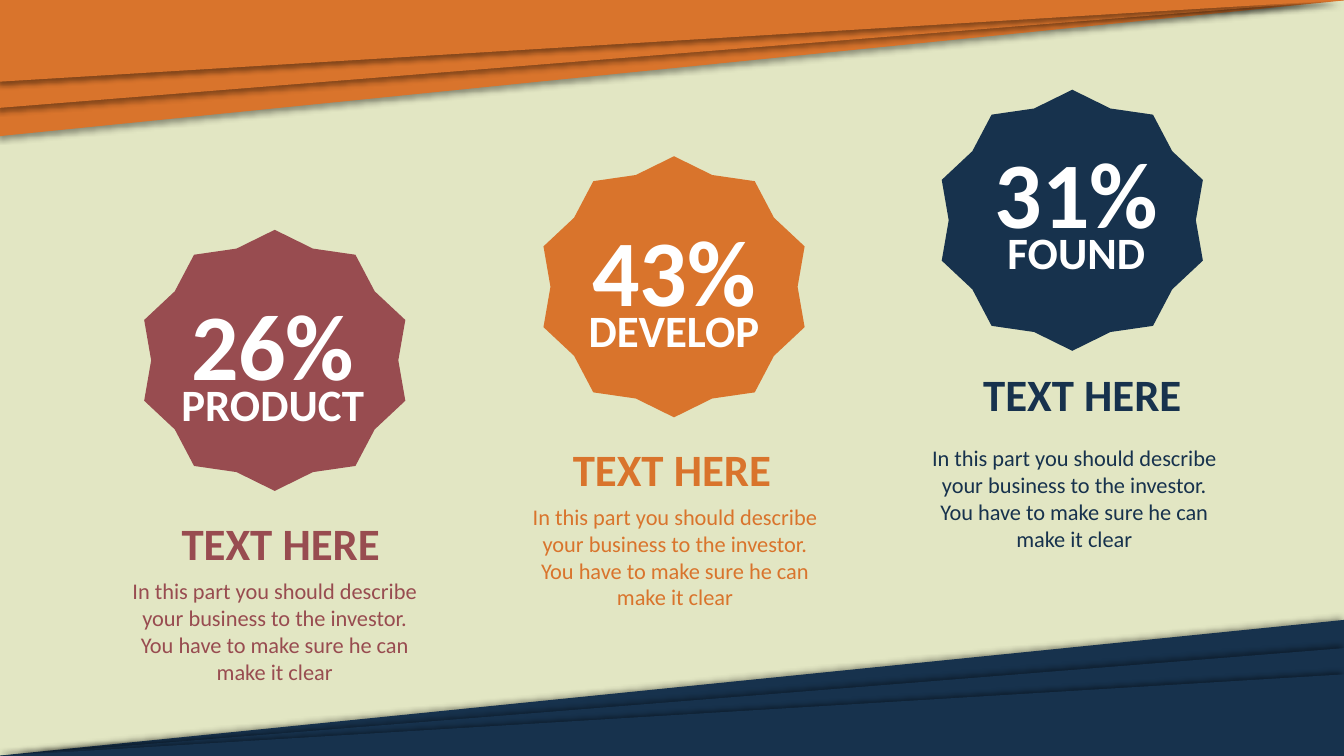
from dataclasses import dataclass

from lxml import etree
from pptx import Presentation
from pptx.dml.color import RGBColor as RGB
from pptx.enum.shapes import MSO_SHAPE as SHAPE
from pptx.enum.text import MSO_AUTO_SIZE as AUTO, PP_ALIGN as ALIGN
from pptx.oxml.ns import qn
from pptx.util import Emu, Pt

PX = 9144
SLIDE_W, SLIDE_H = 1333, 750
BADGE = 259
BANDS = [(1337, 135), (1335, 107), (1333, 81)]
HEADING = "TEXT HERE"
BODY = ("In this part you should describe your business to the investor. "
        "You have to make sure he can make it clear")


@dataclass(frozen=True)
class Theme:
    font: str = "Calibri"
    background: str = "E2E6C3"
    orange: str = "D9742C"
    navy: str = "17324D"
    maroon: str = "984C50"
    white: str = "FFFFFF"
    shadow: str = "000000"
    number: int = 67
    heading: int = 32
    body: int = 16


@dataclass(frozen=True)
class Milestone:
    left: int
    top: int
    number: str
    label: str
    color: str
    label_width: int
    heading_width: int
    number_dx: int
    heading_dx: int
    body_dx: int
    number_dy: int
    heading_dy: int
    body_dy: int


THEME = Theme()
MILESTONES = [
    Milestone(143, 228, "26%", "PRODUCT", THEME.maroon, 232, 267, -2, 6, 0, 52, 279, 340),
    Milestone(539, 155, "43%", "DEVELOP", THEME.orange, 191, 239, 0, -2, 1, 51, 278, 339),
    Milestone(934, 89, "31%", "FOUND", THEME.navy, 169, 242, 4, 10, 2, 40, 270, 347),
]


def px(*lengths):
    return [Emu(round(n * PX)) for n in lengths]


def add_shadow(sp, direction):
    effects = etree.SubElement(sp._element.spPr, qn("a:effectLst"))
    shadow = etree.SubElement(effects, qn("a:outerShdw"), blurRad=str(Pt(4)),
                              dist=str(Pt(3)), dir=str(direction * 60000),
                              algn="ctr", rotWithShape="0")
    color = etree.SubElement(shadow, qn("a:srgbClr"), val=THEME.shadow)
    etree.SubElement(color, qn("a:alpha"), val="40000")


def add_solid(shapes, kind, box, color):
    sp = shapes.add_shape(kind, *px(*box))
    sp.fill.solid()
    sp.fill.fore_color.rgb = RGB.from_string(color)
    sp.line.fill.background()
    return sp


def add_text(shapes, text, center, top, width, height, size, color, bold=True):
    sp = shapes.add_textbox(*px(center - width / 2, top, width, height))
    tf = sp.text_frame
    tf.word_wrap = True
    tf.auto_size = AUTO.SHAPE_TO_FIT_TEXT
    p = tf.paragraphs[0]
    p.text = text
    p.alignment = ALIGN.CENTER
    p.font.name = THEME.font
    p.font.size = Pt(size)
    p.font.bold = bold
    p.font.color.rgb = RGB.from_string(color)


def add_bands(slide, at_bottom, color):
    shapes = slide.shapes.add_group_shape().shapes
    for length, depth in BANDS:
        left = SLIDE_W - length if at_bottom else 0
        top = SLIDE_H - depth if at_bottom else 0
        inset = (length - depth) / 2
        sp = add_solid(shapes, SHAPE.RIGHT_TRIANGLE,
                       (left + inset, top - inset, depth, length), color)
        sp.rotation = 270 if at_bottom else 90
        add_shadow(sp, 225 if at_bottom else 135)


def add_milestone(slide, m):
    shapes = slide.shapes.add_group_shape().shapes
    center = m.left + BADGE / 2
    sp = add_solid(shapes, SHAPE.STAR_10_POINT, (m.left, m.top, BADGE, BADGE), m.color)
    sp.adjustments[0] = 0.45
    sp.shadow.inherit = False
    number_top = m.top + m.number_dy
    add_text(shapes, m.number, center + m.number_dx, number_top, 191, 123,
             THEME.number, THEME.white)
    add_text(shapes, m.label, center + m.number_dx, number_top + 89, m.label_width, 64,
             THEME.heading, THEME.white)
    add_text(shapes, BODY, center + m.body_dx, m.top + m.body_dy, 307, 118,
             THEME.body, m.color, bold=False)
    add_text(shapes, HEADING, center + m.heading_dx, m.top + m.heading_dy,
             m.heading_width, 64, THEME.heading, m.color)


def main():
    prs = Presentation()
    prs.slide_width, prs.slide_height = px(SLIDE_W, SLIDE_H)
    slide = prs.slides.add_slide(prs.slide_layouts[6])
    fill = slide.background.fill
    fill.solid()
    fill.fore_color.rgb = RGB.from_string(THEME.background)
    add_bands(slide, False, THEME.orange)
    for m in MILESTONES:
        add_milestone(slide, m)
    add_bands(slide, True, THEME.navy)
    prs.save("out.pptx")


if __name__ == "__main__":
    main()
